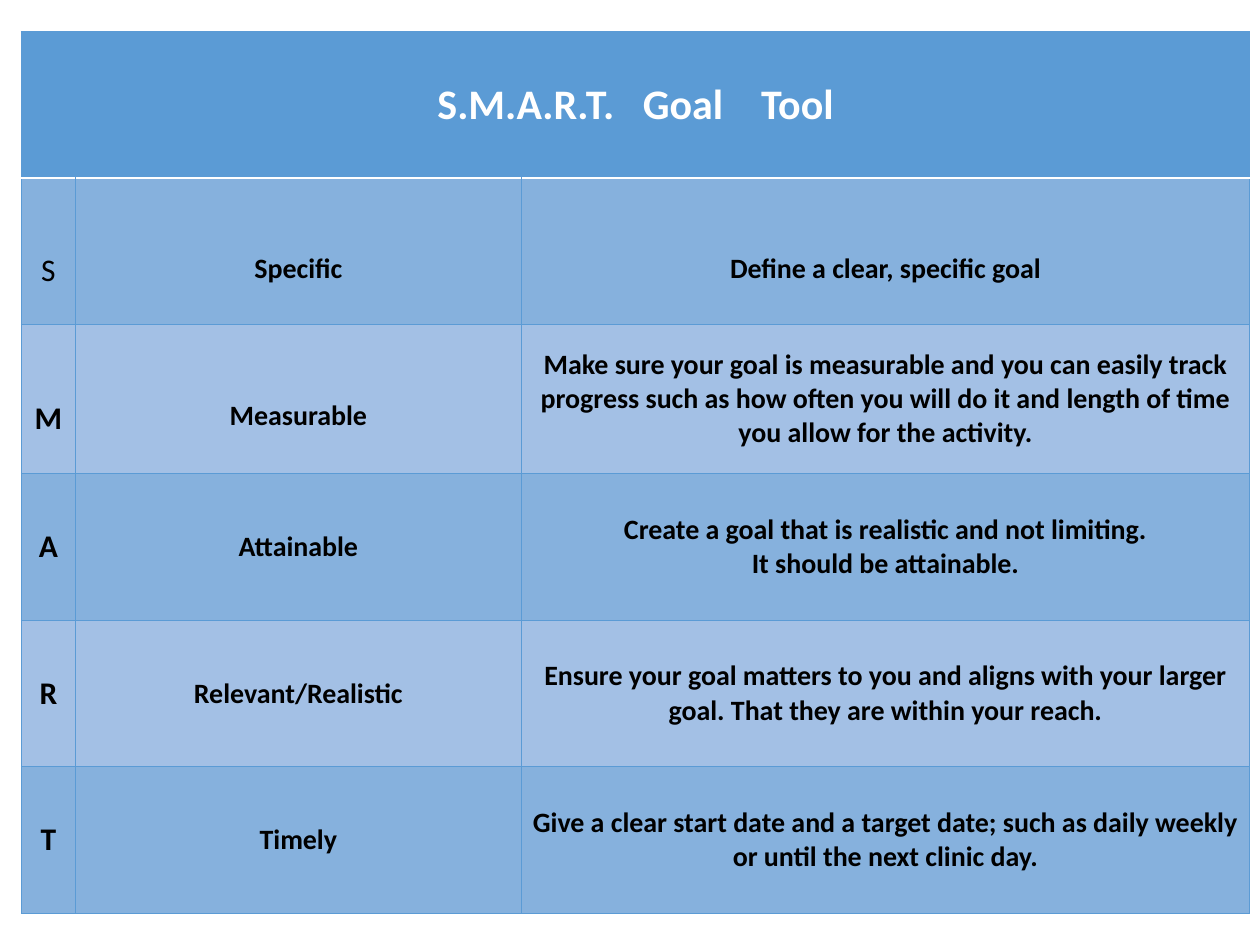
from pptx import Presentation
from pptx.dml.color import RGBColor
from pptx.enum.text import MSO_ANCHOR, PP_ALIGN
from pptx.oxml import parse_xml
from pptx.oxml.ns import nsdecls
from pptx.util import Pt

BLUE = RGBColor(0x5B, 0x9B, 0xD5)
DARK_BAND = RGBColor(0x86, 0xB1, 0xDD)
LIGHT_BAND = RGBColor(0xA3, 0xC0, 0xE5)
WHITE = RGBColor(0xFF, 0xFF, 0xFF)
BLACK = RGBColor(0x00, 0x00, 0x00)

FONT = "Calibri"
LINE_HEIGHT = 1.22  # of the font size
COLUMN_WIDTHS = (31, 254.7, 416.3)
ROW_HEIGHTS = (83.8, 83.8, 85, 83.8, 83.8, 83.8)

# Words of the heading, each with the extra gap in points before it
HEADING = (("S.M.A.R.T.", 0), ("Goal", 10.8), ("Tool", 16.2))

# Letter, name, description, and which of the three sit one line lower
GOALS = (
    ("S", "Specific", "Define a clear, specific goal", (True, True, True)),
    ("M", "Measurable",
     "Make sure your goal is measurable and you can easily track progress "
     "such as how often you will do it and length of time you allow for "
     "the activity.", (True, True, False)),
    ("A", "Attainable",
     "Create a goal that is realistic and not limiting.\n"
     "It should be attainable.", (False, False, False)),
    ("R", "Relevant/Realistic",
     "Ensure your goal matters to you and aligns with your larger goal. "
     "That they are within your reach.", (False, False, False)),
    ("T", "Timely",
     "Give a clear start date and a target date; such as daily weekly or "
     "until the next clinic day.", (False, False, False)),
)


def add_table(page):
    frame = page.shapes.add_table(
        len(ROW_HEIGHTS), len(COLUMN_WIDTHS), Pt(12.2), Pt(18),
        Pt(sum(COLUMN_WIDTHS)), Pt(sum(ROW_HEIGHTS)))
    table = frame.table
    for column, width in zip(table.columns, COLUMN_WIDTHS):
        column.width = Pt(width)
    for row, height in zip(table.rows, ROW_HEIGHTS):
        row.height = Pt(height)
    return table


def set_borders(cell, **special):
    """Thin blue lines, except the sides given as side=(colour, width)."""
    properties = cell._tc.get_or_add_tcPr()
    for index, side in enumerate("LRTB"):
        color, width = special.get(side, (BLUE, 0.5))
        properties.insert(index, parse_xml(
            f'<a:ln{side} {nsdecls("a")} w="{Pt(width)}"><a:solidFill>'
            f'<a:srgbClr val="{color}"/></a:solidFill></a:ln{side}>'))


def style_cell(cell, fill, lowered_by=0):
    cell.fill.solid()
    cell.fill.fore_color.rgb = fill
    cell.vertical_anchor = MSO_ANCHOR.MIDDLE
    cell.margin_left = cell.margin_right = Pt(5.4)
    cell.margin_top = Pt(3.6 + lowered_by)
    cell.margin_bottom = Pt(3.6)


def style_text(cell, size, color, bold=True):
    for para in cell.text_frame.paragraphs:
        para.alignment = PP_ALIGN.CENTER
        for span in para.runs:
            font = span.font
            font.name, font.size, font.bold = FONT, Pt(size), bold
            font.color.rgb = color


def fill_heading(table):
    cell = table.cell(0, 0)
    cell.merge(table.cell(0, len(COLUMN_WIDTHS) - 1))
    para = cell.text_frame.paragraphs[0]
    for word, gap in HEADING:
        if gap:
            space = para.add_run()
            space.text = " "
            space.font._element.set("spc", str(round(gap * 100)))
        para.add_run().text = word
    style_text(cell, 24, WHITE)
    for part in table.rows[0].cells:
        style_cell(part, BLUE)
        set_borders(part, B=(WHITE, 1))


def fill_goal(table, row, goal):
    *texts, lowered = goal
    fill = DARK_BAND if row % 2 else LIGHT_BAND
    for column, text in enumerate(texts):
        cell = table.cell(row, column)
        size = 18 if column == 0 else 16
        cell.text_frame.text = text
        style_text(cell, size, BLACK, bold=(row, column) != (1, 0))
        style_cell(cell, fill, size * LINE_HEIGHT if lowered[column] else 0)
        if row == 1:
            set_borders(cell, T=(WHITE, 1))
        else:
            set_borders(cell)


def main():
    deck = Presentation()
    deck.slide_width, deck.slide_height = Pt(720), Pt(540)
    page = deck.slides.add_slide(deck.slide_layouts[6])

    # Heading row, then one row per goal
    table = add_table(page)
    fill_heading(table)
    for row, goal in enumerate(GOALS, start=1):
        fill_goal(table, row, goal)

    deck.save("out.pptx")


if __name__ == "__main__":
    main()
